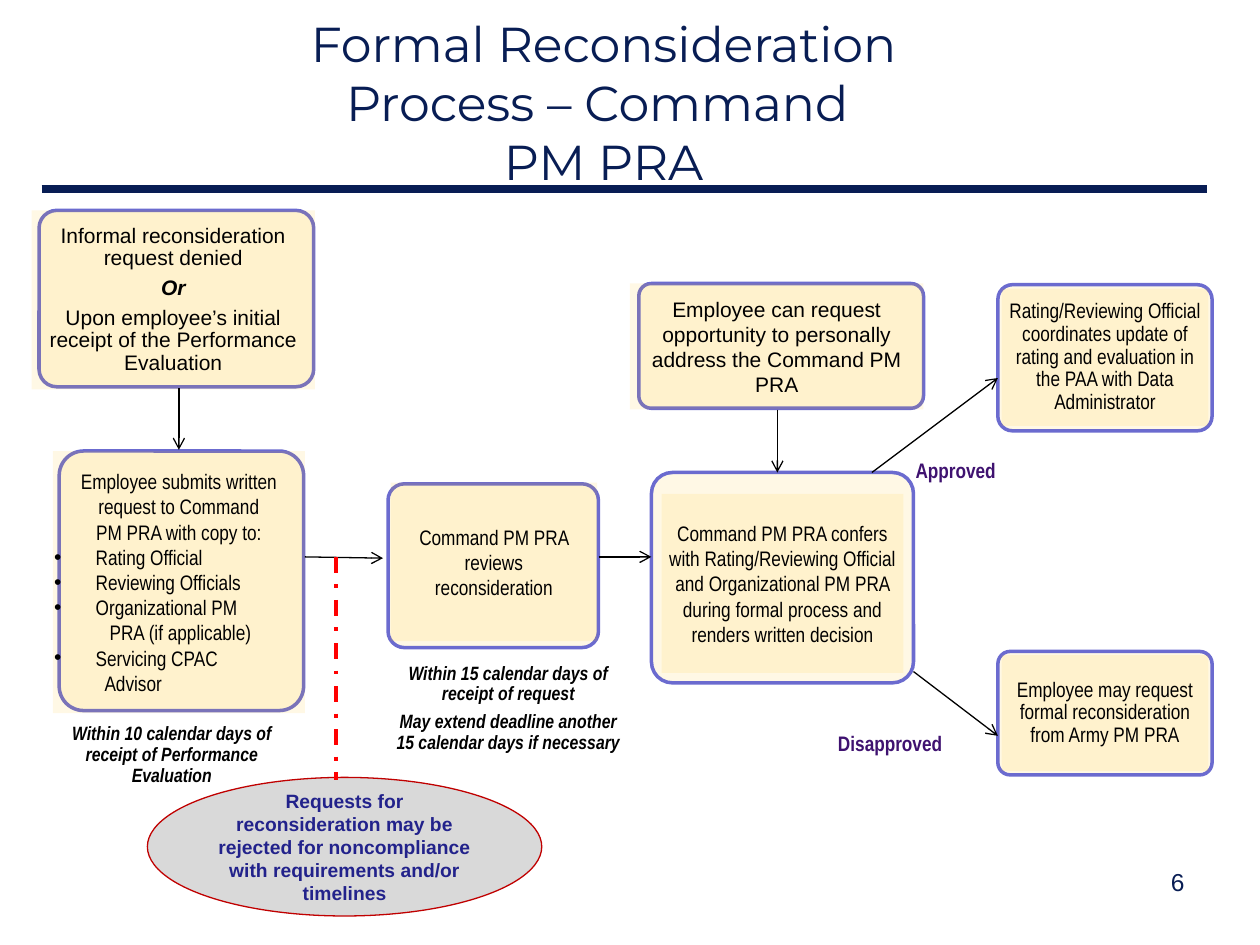
from pptx import Presentation
from pptx.dml.color import RGBColor
from pptx.enum.dml import MSO_LINE
from pptx.enum.shapes import MSO_CONNECTOR, MSO_SHAPE
from pptx.enum.text import MSO_ANCHOR, MSO_AUTO_SIZE, PP_ALIGN
from pptx.oxml.ns import qn
from pptx.util import Inches, Pt
from lxml.etree import SubElement

COLORS = {
    "navy": "081D54", "amber": "FFC000", "frame": "6B6BCF", "black": "000000",
    "purple": "3F1270", "white": "FFFFFF", "grey": "D9D9D9", "crimson": "C00000",
    "indigo": "22228B", "red": "FF0000",
}


class Flowchart:
    narrow = "Arial Narrow"
    wide = "Arial"

    def __init__(self, page):
        self.page = page

    def color(self, name):
        return RGBColor.from_string(COLORS[name])

    def format_text(self, frame, text, font, size, color, bold=False, italic=False,
                    align=PP_ALIGN.CENTER, spacing=None, after=None):
        frame.text = text
        frame.word_wrap = True
        for para in frame.paragraphs:
            para.alignment = align
            if spacing:
                para.line_spacing = spacing
            if after:
                para.space_after = Pt(after)
            for span in para.runs:
                span.font.name = font
                span.font.size = Pt(size)
                span.font.bold = bold
                span.font.italic = italic
                span.font.color.rgb = self.color(color)

    def shape(self, parent, kind, bounds, fill, line=None, width=0.75, alpha=None):
        box = parent.shapes.add_shape(kind, *map(Inches, bounds))
        box.shadow.inherit = False
        box.fill.solid()
        box.fill.fore_color.rgb = self.color(fill)
        if alpha:
            tint = box._element.spPr.xpath("./a:solidFill/a:srgbClr")[0]
            SubElement(tint, qn("a:alpha")).set("val", str(alpha * 1000))
        if line:
            box.line.color.rgb = self.color(line)
            box.line.width = Pt(width)
        else:
            box.line.fill.background()
        return box

    def title(self, text):
        box = self.page.shapes.title
        box.left, box.top, box.width, box.height = map(Inches, (1.83, 0.2, 5.92, 1.22))
        frame = box.text_frame
        self.format_text(frame, text, "Montserrat", 28, "navy")
        frame.auto_size = MSO_AUTO_SIZE.NONE
        frame.vertical_anchor = MSO_ANCHOR.MIDDLE

    def step(self, outline, panel, text, font=narrow, **style):
        group = self.page.shapes.add_group_shape()
        border = self.shape(group, MSO_SHAPE.ROUNDED_RECTANGLE, outline,
                            "amber", "frame", 2, alpha=10)
        border.adjustments[0] = 0.1
        box = self.shape(group, MSO_SHAPE.RECTANGLE, panel, "amber", alpha=10)
        frame = box.text_frame
        frame.margin_left = frame.margin_right = Inches(0.01)
        frame.margin_top = frame.margin_bottom = Inches(0.01)
        frame.vertical_anchor = MSO_ANCHOR.MIDDLE
        self.format_text(frame, text, font, 12, "black", **style)
        return frame

    def indent(self, para, left, bullet):
        para.alignment = PP_ALIGN.LEFT
        properties = para._p.get_or_add_pPr()
        properties.set("marL", str(Inches(left)))
        properties.set("indent", str(-Inches(left) if bullet else 0))
        if bullet:
            SubElement(properties, qn("a:buFont")).set("typeface", self.wide)
            SubElement(properties, qn("a:buChar")).set("char", "•")

    def note(self, bounds, text):
        box = self.shape(self.page, MSO_SHAPE.ROUNDED_RECTANGLE, bounds, "white")
        self.format_text(box.text_frame, text, self.narrow, 11, "black", bold=True,
                         italic=True, spacing=0.9, after=4)
        box.text_frame.vertical_anchor = MSO_ANCHOR.TOP

    def warning(self, bounds, text):
        box = self.shape(self.page, MSO_SHAPE.OVAL, bounds, "grey", "crimson")
        self.format_text(box.text_frame, text, self.wide, 11, "indigo", bold=True)
        box.text_frame.vertical_anchor = MSO_ANCHOR.MIDDLE

    def label(self, bounds, text, font=narrow, size=12, color="purple", **style):
        box = self.page.shapes.add_textbox(*map(Inches, bounds))
        self.format_text(box.text_frame, text, font, size, color, **style)

    def line(self, start, end, color="black", width=0.75, dash=None, arrow=False):
        connector = self.page.shapes.add_connector(
            MSO_CONNECTOR.STRAIGHT, *map(Inches, start + end))
        connector.line.color.rgb = self.color(color)
        connector.line.width = Pt(width)
        if dash:
            connector.line.dash_style = dash
        if arrow:
            SubElement(connector.line._get_or_add_ln(), qn("a:tailEnd")).set("type", "arrow")
        SubElement(connector._element.spPr, qn("a:effectLst"))


deck = Presentation()
deck.slide_width, deck.slide_height = Inches(10), Inches(7.5)
chart = Flowchart(deck.slides.add_slide(deck.slide_layouts[5]))

chart.line((0.33, 1.5), (9.58, 1.5), "navy", 4.5)
chart.title("Formal Reconsideration Process – Command \vPM PRA")

submission = chart.step(
    (0.47, 3.58, 1.94, 2.06), (0.42, 3.58, 2, 2.08),
    "Employee submits written request to Command\nPM PRA with copy to:\n"
    "Rating Official\nReviewing Officials\nOrganizational PM\nPRA (if applicable)\n"
    "Servicing CPAC\nAdvisor")
recipient_indents = [(0.33, True), (0.33, True), (0.33, True), (0.44, False),
                     (0.33, True), (0.4, False)]
for para, (left, bullet) in zip(submission.paragraphs[2:], recipient_indents):
    chart.indent(para, left, bullet)

chart.step((3.08, 3.84, 1.67, 1.3), (3.1, 3.83, 1.64, 1.26),
           "Command PM PRA reviews\nreconsideration")
chart.step((7.92, 2.26, 1.7, 1.16), (7.95, 2.29, 1.64, 1.09),
           "Rating/Reviewing Official coordinates update of rating and evaluation "
           "in the PAA with Data Administrator", spacing=0.9)
chart.step((5.17, 3.75, 2.08, 1.67), (5.25, 3.92, 1.92, 1.42),
           "Command PM PRA confers with Rating/Reviewing Official and Organizational "
           "PM PRA during formal process and renders written decision")
chart.step((7.92, 5.17, 1.7, 0.98), (7.95, 5.2, 1.64, 0.92),
           "Employee may request formal reconsideration from Army PM PRA",
           spacing=0.9, after=4)
chart.step((5.07, 2.25, 2.26, 0.99), (5, 2.25, 2.33, 1),
           "Employee can request opportunity to personally address the Command PM PRA",
           chart.wide)
trigger = chart.step(
    (0.31, 1.67, 2.18, 1.4), (0.25, 1.67, 2.25, 1.42),
    "Informal reconsideration request denied\nOr\n"
    "Upon employee’s initial receipt of the Performance Evaluation",
    chart.wide, spacing=0.9, after=4)
either = trigger.paragraphs[1].runs[0].font
either.bold = either.italic = True

chart.label((6.5, 5.75, 1.13, 0.3), "Disapproved", bold=True)
chart.label((7.08, 3.58, 1.01, 0.3), "Approved", bold=True)
chart.note((0.33, 5.67, 2.07, 0.56),
           "Within 10 calendar days of receipt of Performance Evaluation")
chart.note((3, 5.17, 2.07, 0.95),
           "Within 15 calendar days of receipt of request\n"
           "May extend deadline another 15 calendar days if necessary")
chart.warning((1.17, 6.17, 3.13, 1.1),
              "Requests for reconsideration may be rejected for noncompliance "
              "with requirements and/or timelines")

arrows = [
    ((2.42, 4.42), (3.04, 4.43)), ((4.75, 4.42), (5.17, 4.42)),
    ((6.92, 3.75), (7.92, 3)), ((7.25, 5.33), (7.92, 5.84)),
    ((1.42, 3.08), (1.42, 3.57)), ((6.17, 3.25), (6.17, 3.75)),
]
for start, end in arrows:
    chart.line(start, end, arrow=True)
chart.line((2.67, 4.42), (2.67, 6.19), "red", 2.25, MSO_LINE.DASH_DOT)

chart.label((7.17, 6.83, 2.33, 0.52), "6", chart.wide, 14, "navy", align=PP_ALIGN.RIGHT)

deck.save("out.pptx")
